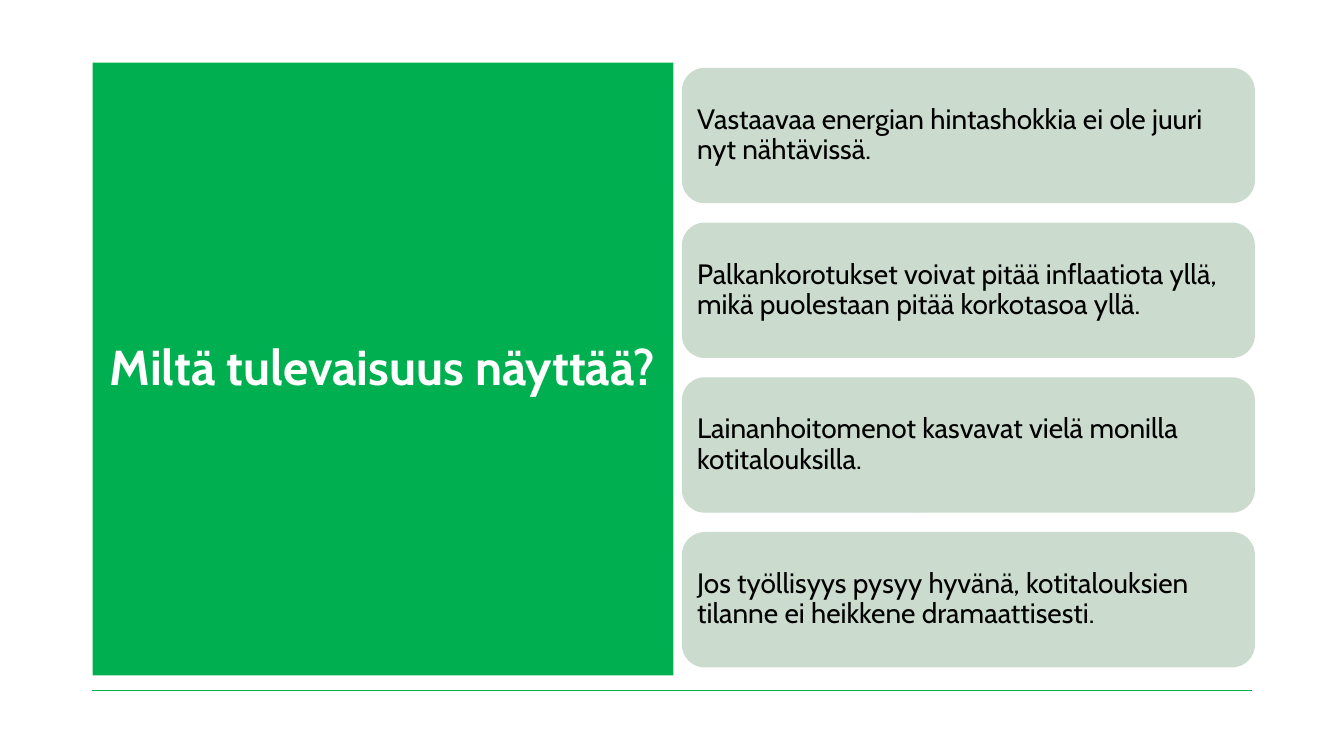
import dataclasses

import pptx
import pptx.dml.color
import pptx.enum.shapes
import pptx.enum.text
import pptx.oxml
import pptx.oxml.ns
import pptx.util

Inches = pptx.util.Inches
Pt = pptx.util.Pt
MSO_SHAPE = pptx.enum.shapes.MSO_SHAPE
PP_ALIGN = pptx.enum.text.PP_ALIGN

GREEN = "00B050"
SAGE = "CBDCCF"
CARD_STEP = 1.535


@dataclasses.dataclass
class Box:
    left: float
    top: float
    width: float
    height: float

    def lengths(self) -> tuple:
        return tuple(Inches(v) for v in dataclasses.astuple(self))


@dataclasses.dataclass
class TextStyle:
    size: float
    color: str
    bold: bool
    align: PP_ALIGN
    inset: float


HEADING = TextStyle(35, "FFFFFF", True, PP_ALIGN.CENTER, 0.1)
CARD = TextStyle(20, "000000", False, PP_ALIGN.LEFT, 0.08)

CARD_TEXTS = [
    "Vastaavaa energian hintashokkia ei ole juuri nyt nähtävissä.",
    "Palkankorotukset voivat pitää inflaatiota yllä, mikä puolestaan pitää korkotasoa yllä.",
    "Lainanhoitomenot kasvavat vielä monilla kotitalouksilla.",
    "Jos työllisyys pysyy hyvänä, kotitalouksien tilanne ei heikkene dramaattisesti.",
]


def rgb(color: str) -> pptx.dml.color.RGBColor:
    return pptx.dml.color.RGBColor.from_string(color)


def set_attributes(target: object, values: dict) -> None:
    for name, value in values.items():
        setattr(target, name, value)


def write_text(sp, text: str, style: TextStyle) -> None:
    tf = sp.text_frame
    inset = Inches(style.inset)
    set_attributes(tf, {
        "word_wrap": True,
        "auto_size": pptx.enum.text.MSO_AUTO_SIZE.NONE,
        "vertical_anchor": pptx.enum.text.MSO_ANCHOR.MIDDLE,
        "margin_left": inset, "margin_right": inset,
        "margin_top": inset, "margin_bottom": inset,
    })
    p = tf.paragraphs[0]
    set_attributes(p, {"alignment": style.align, "line_spacing": 0.9})
    r = p.add_run()
    r.text = text
    set_attributes(r.font, {"name": "Cabin", "size": Pt(style.size), "bold": style.bold})
    r.font.color.rgb = rgb(style.color)


def add_block(s, kind: MSO_SHAPE, box: Box, color: str):
    sp = s.shapes.add_shape(kind, *box.lengths())
    sp.shadow.inherit = False
    sp.fill.solid()
    sp.fill.fore_color.rgb = rgb(color)
    sp.line.fill.background()
    return sp


def add_rule(s, left: float, right: float, top: float) -> None:
    line = s.shapes.add_connector(
        pptx.enum.shapes.MSO_CONNECTOR.STRAIGHT,
        Inches(left), Inches(top), Inches(right), Inches(top))
    line.line.color.rgb = rgb(GREEN)
    line.line.width = Pt(1)
    effects = pptx.oxml.parse_xml(f"<a:effectLst {pptx.oxml.ns.nsdecls('a')}/>")
    line._element.spPr.append(effects)


def main() -> None:
    prs = pptx.Presentation()
    set_attributes(prs, {"slide_width": Inches(13.33), "slide_height": Inches(7.5)})
    s = prs.slides.add_slide(prs.slide_layouts[5])

    # Green panel, behind the title
    panel = add_block(s, MSO_SHAPE.RECTANGLE, Box(0.92, 0.62, 5.76, 6.08), GREEN)
    s.shapes.title._element.addprevious(panel._element)

    # Title
    title = s.shapes.title
    left, top, width, height = Box(0.92, 0.65, 5.75, 6.04).lengths()
    set_attributes(title, {"left": left, "top": top, "width": width, "height": height})
    write_text(title, "Miltä tulevaisuus näyttää?", HEADING)

    # Bottom rule
    add_rule(s, 0.91, 12.42, 6.85)

    # Cards
    for i, text in enumerate(CARD_TEXTS):
        box = Box(6.77, 0.68 + i * CARD_STEP, 5.67, 1.33)
        card = add_block(s, MSO_SHAPE.ROUNDED_RECTANGLE, box, SAGE)
        card.line.color.rgb = rgb(SAGE)
        card.line.width = Pt(1)
        write_text(card, text, CARD)

    prs.save("out.pptx")


if __name__ == "__main__":
    main()
